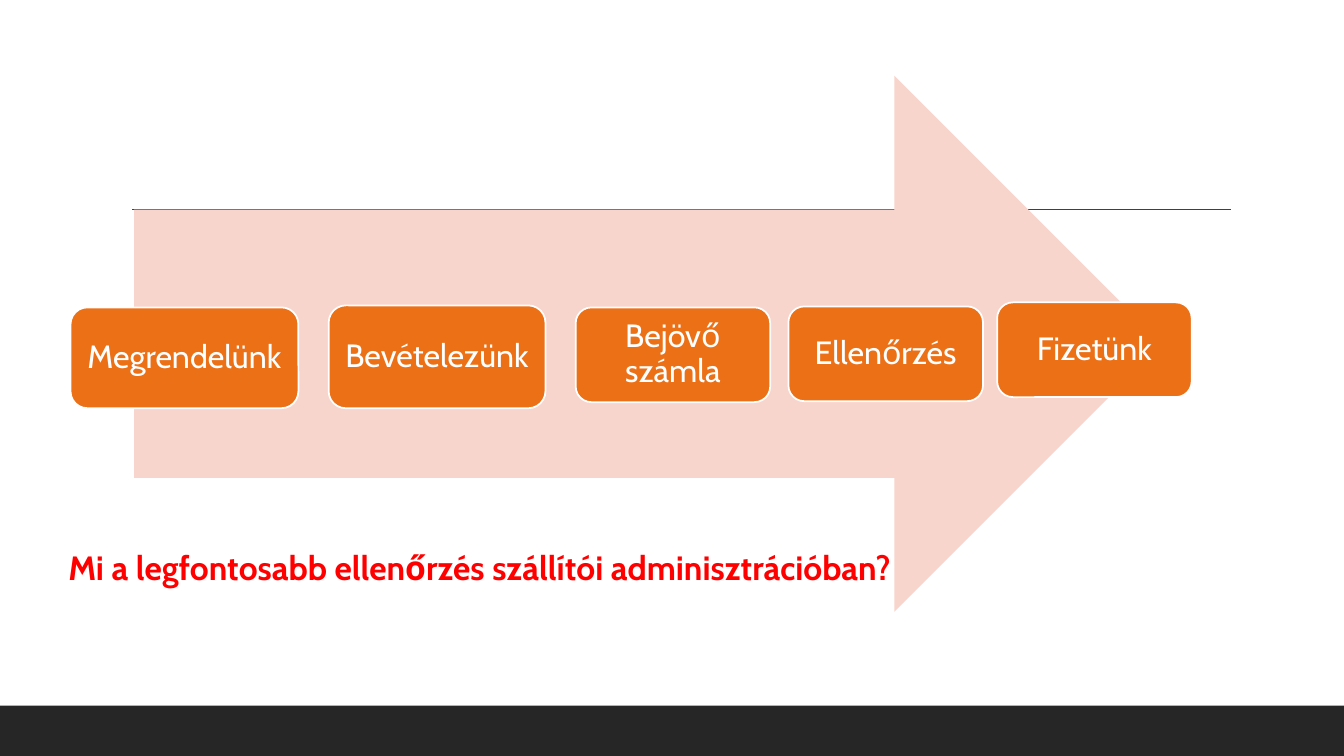
from lxml import etree
from pptx import Presentation
from pptx.dml.color import RGBColor
from pptx.enum.shapes import MSO_CONNECTOR as Connector, MSO_SHAPE as Shape
from pptx.enum.text import MSO_ANCHOR as Anchor, PP_ALIGN as Align
from pptx.oxml.ns import qn
from pptx.util import Inches, Pt

COLORS = {
    "footer": "262626",
    "rule": "404040",
    "arrow": "F8D5CC",
    "step": "EC7016",
    "white": "FFFFFF",
    "question": "FF0000",
}
FONT = "Cabin"
# Each step: text, then left, top, width, height
STEPS = [
    ("Megrendelünk", (0.7, 3.05, 2.26, 1)),
    ("Bevételezünk", (3.26, 3.03, 2.15, 1.02)),
    ("Bejövő számla", (5.71, 3.05, 1.93, 0.94)),
    ("Ellenőrzés", (7.82, 3.04, 1.93, 0.94)),
    ("Fizetünk", (9.89, 3, 1.93, 0.94)),
]


def color(name):
    return RGBColor.from_string(COLORS[name])


def set_all(target, values):
    for name, value in values.items():
        setattr(target, name, value)


def add_block(page, kind, box, fill, outline=None):
    block = page.shapes.add_shape(kind, *map(Inches, box))
    block.shadow.inherit = False
    block.fill.solid()
    block.fill.fore_color.rgb = color(fill)
    if outline:
        block.line.color.rgb = color(outline)
        block.line.width = Pt(1.25)
    else:
        block.line.fill.background()
    return block


def write(frame, text, tint, font_format, frame_format, para_format):
    set_all(frame, {"word_wrap": True, **frame_format})
    para = frame.paragraphs[0]
    set_all(para, para_format)
    span = para.add_run()
    span.text = text
    set_all(span.font, {"name": FONT, **font_format})
    span.font.color.rgb = color(tint)


def add_backdrop(page, box):
    left, top, width, height = box
    # Footer band
    add_block(page, Shape.RECTANGLE, (left, top + height - 0.5, width, 0.5), "footer")
    # Title rule
    ends = (left + 1.31, top + 2.08, left + 12.21, top + 2.08)
    rule = page.shapes.add_connector(Connector.STRAIGHT, *map(Inches, ends))
    rule.line.color.rgb = color("rule")
    rule.line.width = Pt(1)
    etree.SubElement(rule._element.spPr, qn("a:effectLst"))


def add_step(page, text, box):
    step = add_block(page, Shape.ROUNDED_RECTANGLE, box, "step", "white")
    sides = ("left", "top", "right", "bottom")
    frame_format = {f"margin_{side}": Inches(0.1) for side in sides}
    frame_format["vertical_anchor"] = Anchor.MIDDLE
    write(step.text_frame, text, "white", {"size": Pt(23)}, frame_format,
          {"alignment": Align.CENTER, "line_spacing": 0.9})


def add_process(page, box):
    add_block(page, Shape.RIGHT_ARROW, box, "arrow")
    for text, step_box in STEPS:
        add_step(page, text, step_box)


def add_question(page, box):
    question = page.shapes.add_textbox(*map(Inches, box))
    write(question.text_frame,
          "Mi a legfontosabb ellenőrzés szállítói adminisztrációban?",
          "question", {"size": Pt(24), "bold": True}, {}, {"alignment": Align.LEFT})


def main():
    deck = Presentation()
    set_all(deck, {"slide_width": Inches(13.33), "slide_height": Inches(7.5)})
    page = deck.slides.add_slide(deck.slide_layouts[6])
    add_backdrop(page, (0, 0, 13.33, 7.5))
    add_process(page, (1.33, 0.75, 10.2, 5.32))
    add_question(page, (0.58, 5.38, 8.43, 0.5))
    deck.save("out.pptx")


if __name__ == "__main__":
    main()
